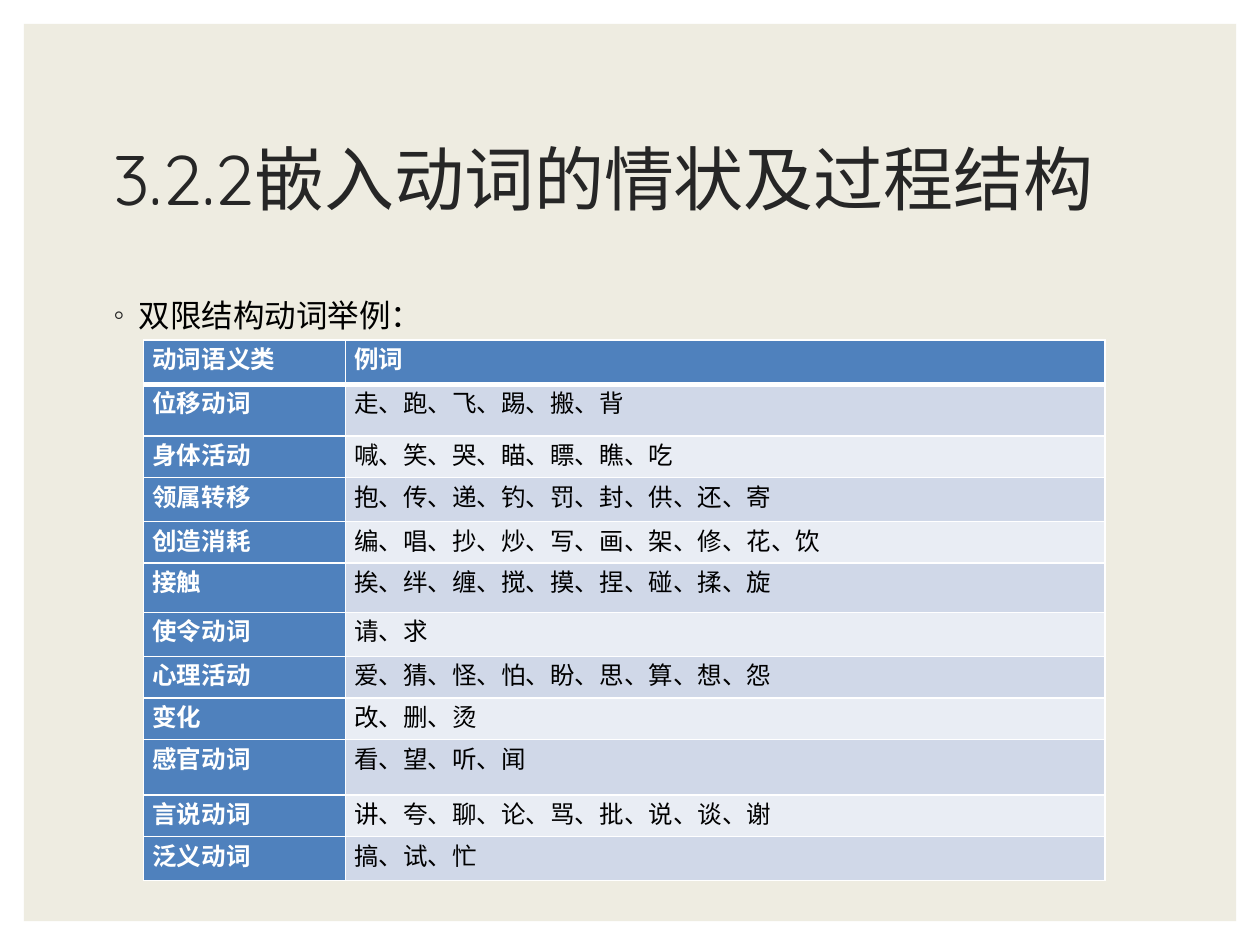
from lxml import etree
from pptx import Presentation
from pptx.dml.color import RGBColor
from pptx.enum.shapes import MSO_SHAPE
from pptx.enum.text import MSO_ANCHOR, MSO_AUTO_SIZE, PP_ALIGN
from pptx.oxml.ns import qn
from pptx.util import Inches, Pt

RECTANGLE = MSO_SHAPE.RECTANGLE
TOP = MSO_ANCHOR.TOP
MIDDLE = MSO_ANCHOR.MIDDLE
LEFT = PP_ALIGN.LEFT
JUSTIFY = PP_ALIGN.JUSTIFY
NO_AUTOFIT = MSO_AUTO_SIZE.NONE

WHITE = RGBColor(0xFF, 0xFF, 0xFF)
BLACK = RGBColor(0x00, 0x00, 0x00)
CHARCOAL = RGBColor(0x26, 0x26, 0x26)
CREAM = RGBColor(0xEE, 0xEC, 0xE1)
BLUE = RGBColor(0x4F, 0x81, 0xBD)
BANDS = (RGBColor(0xD0, 0xD8, 0xE8), RGBColor(0xE9, 0xED, 0xF4))

COLUMN_WIDTHS = (1.6, 6.03)
VERB_ROWS = (
    (0.35, "动词语义类", "例词"),
    (0.41, "位移动词", "走、跑、飞、踢、搬、背"),
    (0.33, "身体活动", "喊、笑、哭、瞄、瞟、瞧、吃"),
    (0.35, "领属转移", "抱、传、递、钓、罚、封、供、还、寄"),
    (0.33, "创造消耗", "编、唱、抄、炒、写、画、架、修、花、饮"),
    (0.39, "接触", "挨、绊、缠、搅、摸、捏、碰、揉、旋"),
    (0.35, "使令动词", "请、求"),
    (0.33, "心理活动", "爱、猜、怪、怕、盼、思、算、想、怨"),
    (0.33, "变化", "改、删、烫"),
    (0.44, "感官动词", "看、望、听、闻"),
    (0.33, "言说动词", "讲、夸、聊、论、骂、批、说、谈、谢"),
    (0.35, "泛义动词", "搞、试、忙"),
)


class SlideBuilder:
    font_name = "Quicksand"

    def __init__(self, slide):
        self.slide = slide

    def add_run(self, paragraph, text, size, color, bold=False):
        run = paragraph.add_run()
        run.text = text
        run.font.name = self.font_name
        run.font.size = Pt(size)
        run.font.bold = bold
        run.font.color.rgb = color

    def add_panel(self, left, top, width, height, color):
        shape = self.slide.shapes.add_shape(
            RECTANGLE, Inches(left), Inches(top), Inches(width), Inches(height))
        shape.shadow.inherit = False
        shape.fill.solid()
        shape.fill.fore_color.rgb = color
        shape.line.fill.background()
        self.slide.shapes._spTree.insert(2, shape._element)

    def place(self, placeholder, left, top, width, height, anchor):
        placeholder.left, placeholder.top = Inches(left), Inches(top)
        placeholder.width, placeholder.height = Inches(width), Inches(height)
        frame = placeholder.text_frame
        frame.auto_size = NO_AUTOFIT
        frame.vertical_anchor = anchor
        paragraph = frame.paragraphs[0]
        paragraph.alignment = LEFT
        return paragraph

    def add_title(self, text):
        paragraph = self.place(self.slide.shapes.title, 0.8, 0.7, 8.4, 1.5, MIDDLE)
        paragraph.line_spacing = 0.9
        self.add_run(paragraph, text, 40, CHARCOAL)

    def add_bullet(self, text):
        paragraph = self.place(self.slide.placeholders[1], 0.8, 2.3, 8.4, 4.3, TOP)
        paragraph.space_before = Pt(9)
        properties = paragraph._p.get_or_add_pPr()
        properties.set("marL", str(Inches(0.2)))
        properties.set("indent", str(-Inches(0.2)))
        bullet_color = etree.SubElement(properties, qn("a:buClr"))
        etree.SubElement(bullet_color, qn("a:srgbClr"), val=str(CHARCOAL))
        etree.SubElement(properties, qn("a:buChar"), char="◦")
        self.add_run(paragraph, text, 18, BLACK)

    def set_borders(self, cell, top, bottom):
        properties = cell._tc.get_or_add_tcPr()
        sides = (("L", 1), ("R", 1), ("T", top), ("B", bottom))
        for index, (side, width) in enumerate(sides):
            line = etree.Element(qn(f"a:ln{side}"), w=str(Pt(width)))
            fill = etree.SubElement(line, qn("a:solidFill"))
            etree.SubElement(fill, qn("a:srgbClr"), val=str(WHITE))
            properties.insert(index, line)

    def fill_cell(self, cell, text, fill, color, bold):
        cell.margin_left = cell.margin_right = Inches(0.07)
        cell.margin_top = cell.margin_bottom = Inches(0)
        cell.fill.solid()
        cell.fill.fore_color.rgb = fill
        paragraph = cell.text_frame.paragraphs[0]
        paragraph.alignment = JUSTIFY
        self.add_run(paragraph, text, 14, color, bold)

    def add_table(self, left, top, column_widths, rows):
        height = sum(row[0] for row in rows)
        table = self.slide.shapes.add_table(
            len(rows), len(column_widths), Inches(left), Inches(top),
            Inches(sum(column_widths)), Inches(height)).table
        for column, width in zip(table.columns, column_widths):
            column.width = Inches(width)
        for row_index, (row_height, *texts) in enumerate(rows):
            table.rows[row_index].height = Inches(row_height)
            for column_index, text in enumerate(texts):
                cell = table.cell(row_index, column_index)
                if row_index == 0 or column_index == 0:
                    self.fill_cell(cell, text, BLUE, WHITE, True)
                else:
                    band = BANDS[(row_index - 1) % 2]
                    self.fill_cell(cell, text, band, BLACK, False)
                self.set_borders(cell, top=3 if row_index == 1 else 1,
                                 bottom=3 if row_index == 0 else 1)


def main():
    presentation = Presentation()
    presentation.slide_width = Inches(10)
    presentation.slide_height = Inches(7.5)
    slide = presentation.slides.add_slide(presentation.slide_layouts[1])
    builder = SlideBuilder(slide)
    builder.add_panel(0.19, 0.19, 9.62, 7.12, CREAM)
    builder.add_title("3.2.2嵌入动词的情状及过程结构")
    builder.add_bullet("双限结构动词举例：")
    builder.add_table(1.14, 2.7, COLUMN_WIDTHS, VERB_ROWS)
    presentation.save("out.pptx")


if __name__ == "__main__":
    main()
